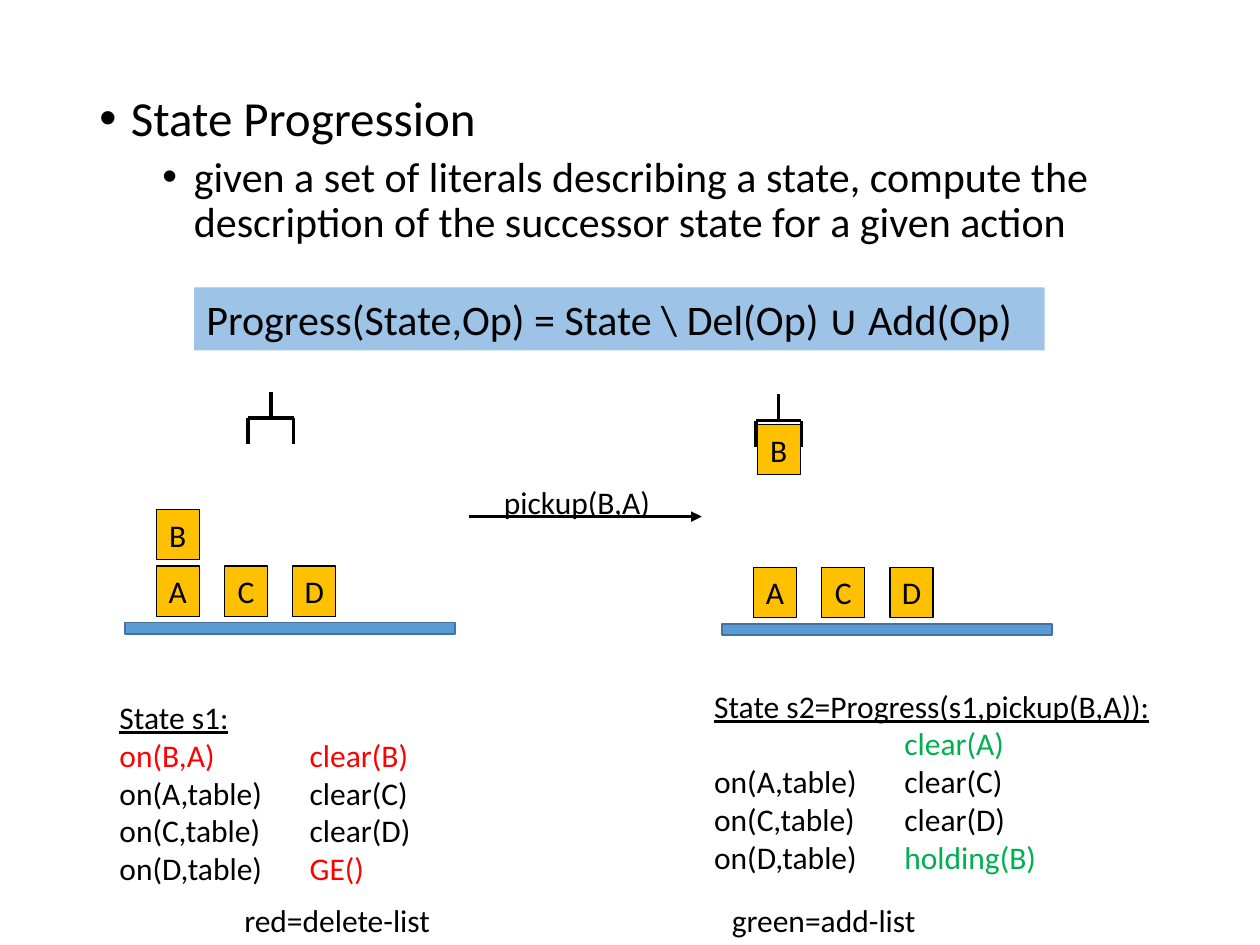
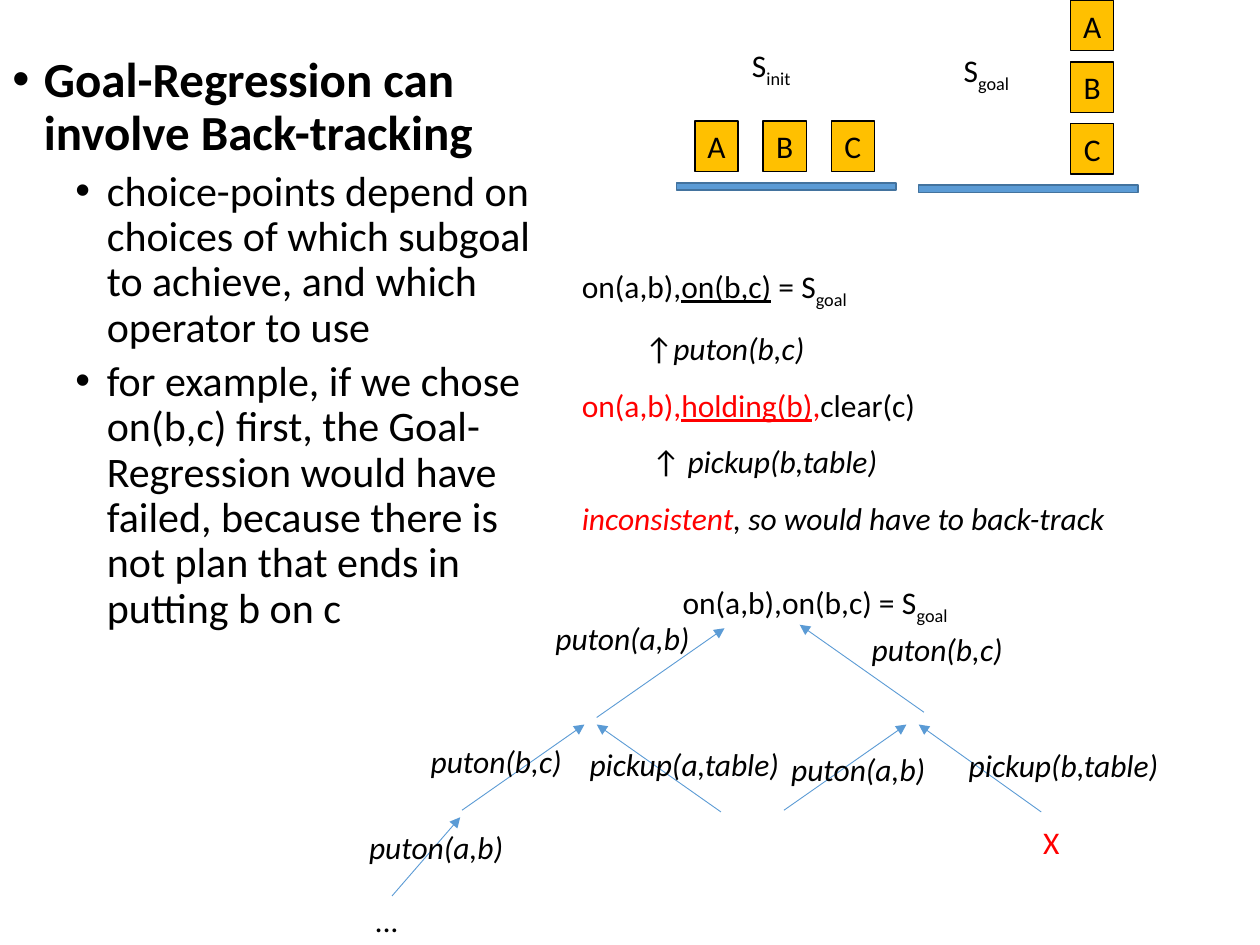
from dataclasses import dataclass

import pptx
import pptx.dml.color
import pptx.enum.shapes
import pptx.enum.text
import pptx.oxml
import pptx.oxml.ns
import pptx.util

Pt = pptx.util.Pt


@dataclass(frozen=True)
class Theme:
    font: str = "Calibri"
    ink: str = "000000"
    block: str = "FFC000"
    table: str = "5B9BD5"
    table_edge: str = "43739E"
    formula: str = "9DC3E6"
    deleted: str = "FF0000"
    added: str = "00B050"
    heading: float = 28
    subpoint: float = 24
    label: float = 18


THEME = Theme()
BLOCK_WIDTH, BLOCK_HEIGHT, COLUMN_PITCH = 24.6, 28.8, 39


def rgb(code):
    return pptx.dml.color.RGBColor.from_string(code)


def add_xml(parent, tag, children="", **attributes):
    """Append one drawing element with the given attributes."""
    settings = " ".join(f'{name}="{value}"' for name, value in attributes.items())
    namespace = pptx.oxml.ns.nsdecls("a")
    parent.append(pptx.oxml.parse_xml(f"<a:{tag} {namespace} {settings}>{children}</a:{tag}>"))


# Text
def add_span(para, text, size=THEME.label, color=THEME.ink, bold=False,
             italic=False, underline=False, subscript=False):
    span = para.add_run()
    span.text = text
    font = span.font
    font.name, font.size, font.color.rgb = THEME.font, Pt(size), rgb(color)
    font.bold, font.italic, font.underline = bold, italic, underline
    if subscript:
        span._r.get_or_add_rPr().set("baseline", "-25000")


def fill_frame(frame, lines, spacing=None, tab=None):
    """Each line is a list of (text, style) pairs."""
    for index, spans in enumerate(lines):
        para = frame.paragraphs[0] if index == 0 else frame.add_paragraph()
        if spacing:
            para.line_spacing = spacing
        if tab:
            add_xml(para._p.get_or_add_pPr(), "tabLst",
                    f'<a:tab pos="{Pt(tab)}" algn="l"/>')
        for text, style in spans:
            add_span(para, text, **style)


def add_text(page, left, top, width, height, lines, spacing=None, tab=None):
    box = page.shapes.add_textbox(Pt(left), Pt(top), Pt(width), Pt(height))
    box.text_frame.word_wrap = False
    box.text_frame.auto_size = pptx.enum.text.MSO_AUTO_SIZE.SHAPE_TO_FIT_TEXT
    fill_frame(box.text_frame, lines, spacing, tab)
    return box


def add_outline(page, left, top, width, height, heading, subpoints, bold=False):
    box = page.shapes.add_textbox(Pt(left), Pt(top), Pt(width), Pt(height))
    frame = box.text_frame
    frame.word_wrap = True
    fill_frame(frame, [[(heading, dict(size=THEME.heading, bold=bold))]]
               + [[(text, dict(size=THEME.subpoint))] for text in subpoints], 0.9)
    for index, para in enumerate(frame.paragraphs):
        para.space_before = Pt(5 if index else 10)
        settings = para._p.get_or_add_pPr()
        settings.set("marL", str(Pt(54 if index else 18)))
        settings.set("indent", str(Pt(-18)))
        add_xml(settings, "buFont", typeface="Arial")
        add_xml(settings, "buChar", char="•")


# Shapes and lines
def add_rectangle(page, left, top, width, height, fill, line, line_width):
    shape = page.shapes.add_shape(pptx.enum.shapes.MSO_SHAPE.RECTANGLE,
                                  Pt(left), Pt(top), Pt(width), Pt(height))
    shape.shadow.inherit = False
    shape.fill.solid()
    shape.fill.fore_color.rgb = rgb(fill)
    shape.line.color.rgb = rgb(line)
    shape.line.width = Pt(line_width)
    return shape


def add_line(page, start, end, color, width, arrow=False):
    line = page.shapes.add_connector(pptx.enum.shapes.MSO_CONNECTOR.STRAIGHT,
                                     *(Pt(value) for value in (*start, *end)))
    line.line.color.rgb = rgb(color)
    line.line.width = Pt(width)
    if arrow:
        add_xml(line.line._get_or_add_ln(), "tailEnd", type="triangle")
    add_xml(line._element.spPr, "effectLst")


def add_block(page, left, top, letter):
    block = add_rectangle(page, left, top, BLOCK_WIDTH, BLOCK_HEIGHT,
                          THEME.block, THEME.ink, 0.75)
    block.text_frame.word_wrap = False
    fill_frame(block.text_frame, [[(letter, {})]])


def add_block_world(page, left, top, width, height, columns, inset, gap):
    """A table whose columns of blocks are listed from the bottom up."""
    add_rectangle(page, left, top, width, height, THEME.table, THEME.table_edge, 1)
    for column, letters in enumerate(columns):
        for row, letter in enumerate(letters, start=1):
            add_block(page, left + inset + column * COLUMN_PITCH,
                      top - row * (BLOCK_HEIGHT + gap), letter)


def add_gripper(page, left, top, width=26, height=30):
    right, middle, bar, bottom = left + width, left + width / 2, top + height / 2, top + height
    for start, end in [((middle, top), (middle, bar)), ((left, bar), (right, bar)),
                       ((left, bar), (left, bottom)), ((right, bar), (right, bottom))]:
        add_line(page, start, end, THEME.ink, 2)


# Slide 1: progression
def add_state(page, left, top, width, title, rows):
    lines = [[(title, dict(underline=True))]] + rows
    add_text(page, left, top, width, 116.6, lines, tab=108.7)


def build_progression(page):
    add_outline(page, 49.7, 50.4, 620.6, 435.6, "State Progression", [
        "given a set of literals describing a state, compute the "
        "description of the successor state for a given action"])

    # Formula band
    formula = add_text(page, 110.9, 164.2, 486, 36, [
        [("Progress(State,Op) = State \\ Del(Op) ∪ Add(Op)", dict(size=THEME.subpoint))]])
    formula.fill.solid()
    formula.fill.fore_color.rgb = rgb(THEME.formula)

    # Before and after the action
    add_block_world(page, 71.3, 355.7, 188.6, 6.5, ["AB", "C", "D"], 18, 3.5)
    add_gripper(page, 141.8, 224)
    add_block_world(page, 412.6, 356.4, 188.6, 6.5, ["A", "C", "D"], 18, 3.5)
    add_block(page, 432.7, 242.6, "B")
    add_gripper(page, 432, 225.4)
    add_line(page, (267.8, 295.2), (401, 295.2), THEME.ink, 2, arrow=True)
    add_text(page, 280.8, 272.2, 99.4, 28.8, [[("pickup(B,A)", {})]])

    # State descriptions
    deleted, added = dict(color=THEME.deleted), dict(color=THEME.added)
    kept = [[("on(A,table)\tclear(C)", {})], [("on(C,table)\tclear(D)", {})]]
    add_state(page, 61.2, 395.3, 182.2, "State s1:", [
        [("on(B,A)\tclear(B)", deleted)], *kept,
        [("on(D,table)\t", {}), ("GE()", deleted)]])
    add_state(page, 401, 388.8, 265.7, "State s2=Progress(s1,pickup(B,A)):", [
        [("\t", {}), ("clear(A)", added)], *kept,
        [("on(D,table)\t", {}), ("holding(B)", added)]])
    add_text(page, 132.5, 511.2, 121.7, 28.8, [[("red=delete-list", {})]])
    add_text(page, 411.1, 511.2, 121, 28.8, [[("green=add-list", {})]])


# Slide 2: goal regression
def state_name(subscript, prefix=""):
    return [(prefix + "S", {}), (subscript, dict(subscript=True))]


def add_regression_steps(page, left, top, width, height):
    red, italic = dict(color=THEME.deleted), dict(italic=True)
    underline = dict(underline=True)
    add_text(page, left, top, width, height, [
        [("on(a,b),", {}), ("on(b,c)", underline), *state_name("goal", " = ")],
        [("\t↑", {}), ("puton(b,c)", italic)],
        [("on(a,b),", red), ("holding(b)", red | underline), (",", red), ("clear(c)", {})],
        [("\t ↑ ", {}), ("pickup(b,table)", italic)],
        [("inconsistent", red | italic), (", so would have to back-track", italic)],
    ], spacing=1.5)


def add_search_tree(page, left, top):
    add_text(page, left + 180, top + 0.5, 170.6, 40.3,
             [state_name("goal", "on(a,b),on(b,c) = ")], spacing=1.5)

    # Edges point from each subgoal to its parent
    edges = [((138, 93), (211, 42)), ((325, 90), (254, 40)),
             ((392, 147), (322, 97)), ((245, 146), (315, 97)),
             ((209, 147), (138, 97)), ((61, 146), (131, 97)),
             ((21, 195), (60, 150))]
    for edge in edges:
        start, end = [(left + x, top + y) for x, y in edge]
        add_line(page, start, end, THEME.table, 0.5, arrow=True)

    # Operators beside the edges
    operators = [("puton(b,c)", 288, 39.4, 90), ("puton(a,b)", 107.3, 33, 92),
                 ("pickup(b,table)", 343.5, 105.6, 124), ("puton(a,b)", 242, 107.8, 92),
                 ("pickup(a,table)", 126.8, 105, 124), ("puton(b,c)", 36, 103.5, 90),
                 ("puton(a,b)", 0.8, 152.4, 92), ("...", 4.4, 194.2, 28)]
    for text, x, y, width in operators:
        add_text(page, left + x, top + y, width, 28.8, [[(text, dict(italic=True))]])
    add_text(page, left + 386, top + 149.5, 23, 28.8, [[("X", dict(color=THEME.deleted))]])


def build_regression(page):
    add_outline(page, 0, 28.1, 321.1, 354.2, "Goal-Regression can involve Back-tracking", [
        "choice-points depend on choices of which subgoal to achieve, "
        "and which operator to use",
        "for example, if we chose on(b,c) first, the Goal-Regression would have "
        "failed, because there is not plan that ends in putting b on c"], bold=True)

    # Initial and goal states
    add_block_world(page, 386.6, 104.4, 125.3, 4.3, ["A", "B", "C"], 10.5, 6.4)
    add_block_world(page, 524.9, 105.8, 125.3, 4.3, ["CBA"], 87, 6.4)
    add_text(page, 422.6, 23, 38.9, 28.8, [state_name("init")])
    add_text(page, 543.6, 25.9, 43.2, 28.8, [state_name("goal")])

    add_regression_steps(page, 325.4, 136.8, 316.8, 170)
    add_search_tree(page, 203, 317)


def main():
    deck = pptx.Presentation()
    deck.slide_width, deck.slide_height = Pt(720), Pt(540)
    for build in (build_progression, build_regression):
        build(deck.slides.add_slide(deck.slide_layouts[6]))
    deck.save("out.pptx")


if __name__ == "__main__":
    main()
